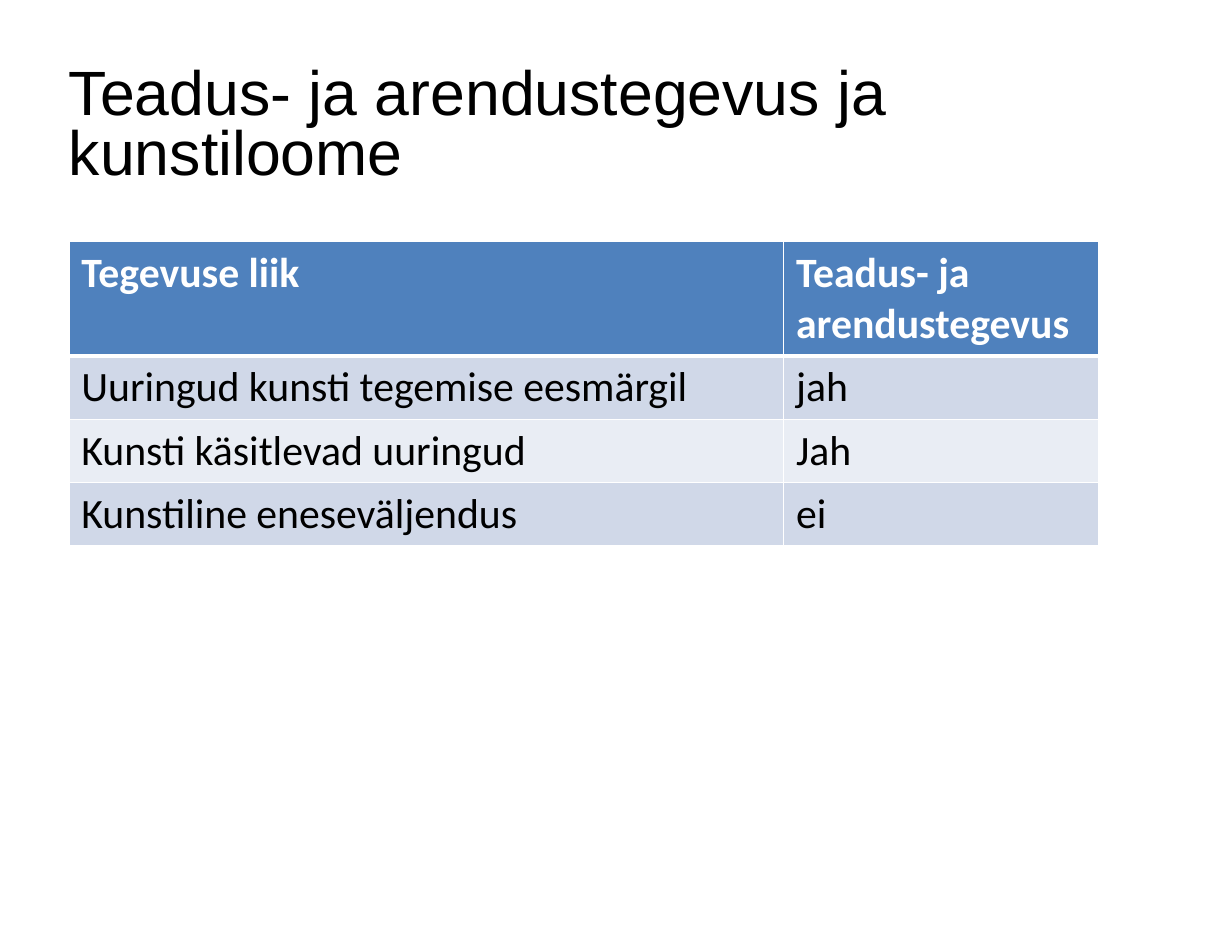
from pptx import Presentation
from pptx.dml.color import RGBColor
from pptx.enum.text import MSO_ANCHOR, PP_ALIGN
from pptx.oxml import parse_xml
from pptx.oxml.ns import nsdecls
from pptx.util import Cm, Inches, Pt

MIDDLE = MSO_ANCHOR.MIDDLE
LEFT = PP_ALIGN.LEFT

TITLE = "Teadus- ja arendustegevus ja kunstiloome"
ROWS = [
    ("Tegevuse liik", "Teadus- ja arendustegevus"),
    ("Uuringud kunsti tegemise eesmärgil", "jah"),
    ("Kunsti käsitlevad uuringud", "Jah"),
    ("Kunstiline eneseväljendus", "ei"),
]
COLS = (5.71, 2.52)
ROW, HEIGHT = 0.41, 2.4
EDGE, WIDTH = 0.55, sum(COLS)
COLORS = {
    "head": "4F81BD",
    "odd": "D0D8E8",
    "even": "E9EDF4",
    "white": "FFFFFF",
    "black": "000000",
}


def color(name):
    return RGBColor.from_string(COLORS[name])


def style(para, font, size, ink, bold=False):
    para.font.name = font
    para.font.size = Pt(size)
    para.font.bold = bold
    para.font.color.rgb = color(ink)


def border(cell, row):
    widths = {"L": 1, "R": 1, "T": 3 if row == 1 else 1, "B": 3 if row == 0 else 1}
    props = cell._tc.get_or_add_tcPr()
    for place, (side, width) in enumerate(widths.items()):
        line = parse_xml(
            f'<a:ln{side} {nsdecls("a")} w="{Pt(width)}"><a:solidFill>'
            f'<a:srgbClr val="{COLORS["white"]}"/></a:solidFill></a:ln{side}>'
        )
        props.insert(place, line)


def add_title(slide):
    title = slide.shapes.title
    title.left, title.top = Inches(EDGE), Inches(0.33)
    title.width, title.height = Inches(WIDTH), Inches(1.38)
    frame = title.text_frame
    frame.text = TITLE
    frame.word_wrap = True
    frame.vertical_anchor = MIDDLE
    frame.margin_left = frame.margin_right = 0
    frame.margin_top = frame.margin_bottom = 0
    para = frame.paragraphs[0]
    para.alignment = LEFT
    para.line_spacing = 0.8
    style(para, "Arial", 36, "black")


def add_grid(slide):
    grid = slide.shapes.add_table(
        len(ROWS), len(COLS), Inches(EDGE), Inches(1.93),
        Inches(WIDTH), Inches(HEIGHT),
    )
    table = grid.table
    for col, width in zip(table.columns, COLS):
        col.width = Inches(width)
    for r, texts in enumerate(ROWS):
        table.rows[r].height = Inches(ROW)
        fill = "head" if r == 0 else "odd" if r % 2 else "even"
        ink = "white" if r == 0 else "black"
        for c, text in enumerate(texts):
            cell = table.cell(r, c)
            cell.text = text
            cell.fill.solid()
            cell.fill.fore_color.rgb = color(fill)
            border(cell, r)
            style(cell.text_frame.paragraphs[0], "Calibri", 24, ink, r == 0)
    grid.height = Inches(HEIGHT)


def main():
    deck = Presentation()
    deck.slide_width = Cm(25)
    deck.slide_height = Cm(19)
    slide = deck.slides.add_slide(deck.slide_layouts[5])
    add_title(slide)
    add_grid(slide)
    deck.save("out.pptx")


if __name__ == "__main__":
    main()
